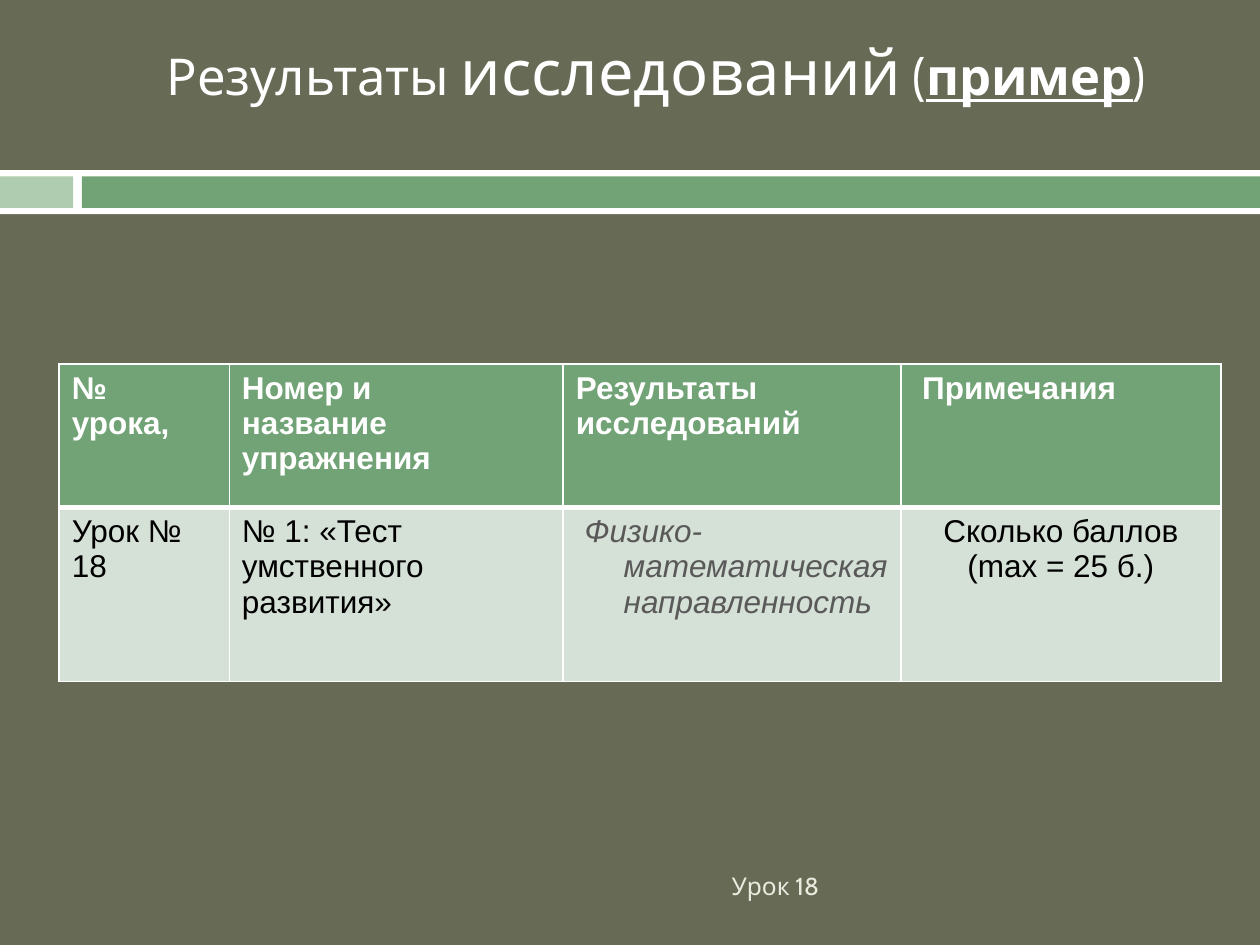
from lxml.etree import SubElement as Sub
from pptx import Presentation
from pptx.dml.color import RGBColor
from pptx.enum.shapes import MSO_SHAPE as Shape
from pptx.enum.text import MSO_ANCHOR as Anchor, PP_ALIGN as Align
from pptx.oxml.ns import qn
from pptx.util import Inches, Pt

WIDE, HIGH = 10, 7.5
WHITE, GREEN, PALE, GREY = "FFFFFF", "72A376", "D5E0D6", "595959"
COLS = [1.35, 2.65, 2.68, 2.54]
ROWS = [1.14, 1.38]
HEAD = [
    ["№\vурока,"],
    ["Номер и", "название упражнения"],
    ["Результаты", "исследований"],
    [" Примечания"],
]
BODY = [
    ["Урок № 18"],
    ["№ 1: «Тест умственного развития»"],
    [" Физико-математическая направленность"],
    ["Сколько баллов", "(max = 25 б.)"],
]


def paint(fill, tint):
    fill.solid()
    fill.fore_color.rgb = RGBColor.from_string(tint)


def add_run(para, text, tint, **look):
    run = para.add_run()
    run.text = text
    for name, value in look.items():
        setattr(run.font, name, value)
    paint(run.font.fill, tint)


def hang(para, depth):
    props = para._p.get_or_add_pPr()
    props.set("marL", str(Inches(depth)))
    props.set("indent", str(-Inches(depth)))


def add_bar(slide, left, top, width, height, tint):
    bar = slide.shapes.add_shape(
        Shape.RECTANGLE, *map(Inches, (left, top, width, height)))
    bar.shadow.inherit = False
    paint(bar.fill, tint)
    bar.line.fill.background()


def add_box(slide, left, top, width, height, anchor, align):
    box = slide.shapes.add_textbox(
        *map(Inches, (left, top, width, height)))
    frame = box.text_frame
    frame.word_wrap = True
    frame.vertical_anchor = anchor
    para = frame.paragraphs[0]
    para.alignment = align
    return para


def add_edges(cell, base):
    props = cell._tc.get_or_add_tcPr()
    for side, width in {"L": 1, "R": 1, "T": 1, "B": base}.items():
        edge = Sub(props, qn(f"a:ln{side}"), w=str(Pt(width)))
        fill = Sub(edge, qn("a:solidFill"))
        Sub(fill, qn("a:srgbClr"), val=WHITE)


def fill_cell(cell, lines, tint, ink, base, align=None, depth=0, **look):
    add_edges(cell, base)
    paint(cell.fill, tint)
    frame = cell.text_frame
    for index, line in enumerate(lines):
        para = frame.add_paragraph() if index else frame.paragraphs[0]
        para.alignment = align
        if depth:
            hang(para, depth)
            cell.margin_right = Inches(0.05)
        for part, text in enumerate(line.split("\v")):
            if part:
                para.add_line_break()
            add_run(para, text, ink, name="Arial", size=Pt(18), **look)


def add_grid(slide):
    frame = slide.shapes.add_table(
        len(ROWS), len(COLS), Inches(0.47), Inches(2.89),
        Inches(sum(COLS)), Inches(sum(ROWS)))
    grid = frame.table
    for col, width in zip(grid.columns, COLS):
        col.width = Inches(width)
    for row, height in zip(grid.rows, ROWS):
        row.height = Inches(height)
    looks = [{}, {}, {"ink": GREY, "italic": True, "depth": 0.38},
             {"align": Align.CENTER}]
    for col, look in enumerate(looks):
        fill_cell(grid.cell(0, col), HEAD[col], GREEN, WHITE, 3, bold=True)
        style = {"ink": "000000", "bold": False, **look}
        fill_cell(grid.cell(1, col), BODY[col], PALE, base=1, **style)


def add_title(slide):
    para = add_box(slide, 0.75, 0.21, 8.92, 1.14, Anchor.TOP, Align.CENTER)
    para.space_before = Pt(7)
    hang(para, 0.35)
    strong = {"bold": True, "underline": True}
    for text, size, look in [
        ("Результаты ", 29, {}), ("исследований", 36, {}),
        (" (", 29, {}), ("пример", 29, strong), (")", 29, {}),
    ]:
        add_run(para, text, WHITE, name="Cabin", size=Pt(size), **look)


def main():
    deck = Presentation()
    deck.slide_width, deck.slide_height = Inches(WIDE), Inches(HIGH)
    slide = deck.slides.add_slide(deck.slide_layouts[6])
    paint(slide.background.fill, "676A55")
    add_bar(slide, 0, 1.35, WIDE, 0.35, WHITE)
    add_bar(slide, 0, 1.4, 0.58, 0.25, "B0CCB0")
    add_bar(slide, 0.65, 1.4, WIDE - 0.65, 0.25, GREEN)
    foot = add_box(slide, 0.67, 6.83, 5.93, 0.4, Anchor.MIDDLE, Align.RIGHT)
    add_run(foot, "Урок 18", "EAEBDE", name="Cabin", size=Pt(14))
    add_title(slide)
    add_grid(slide)
    deck.save("out.pptx")


if __name__ == "__main__":
    main()
